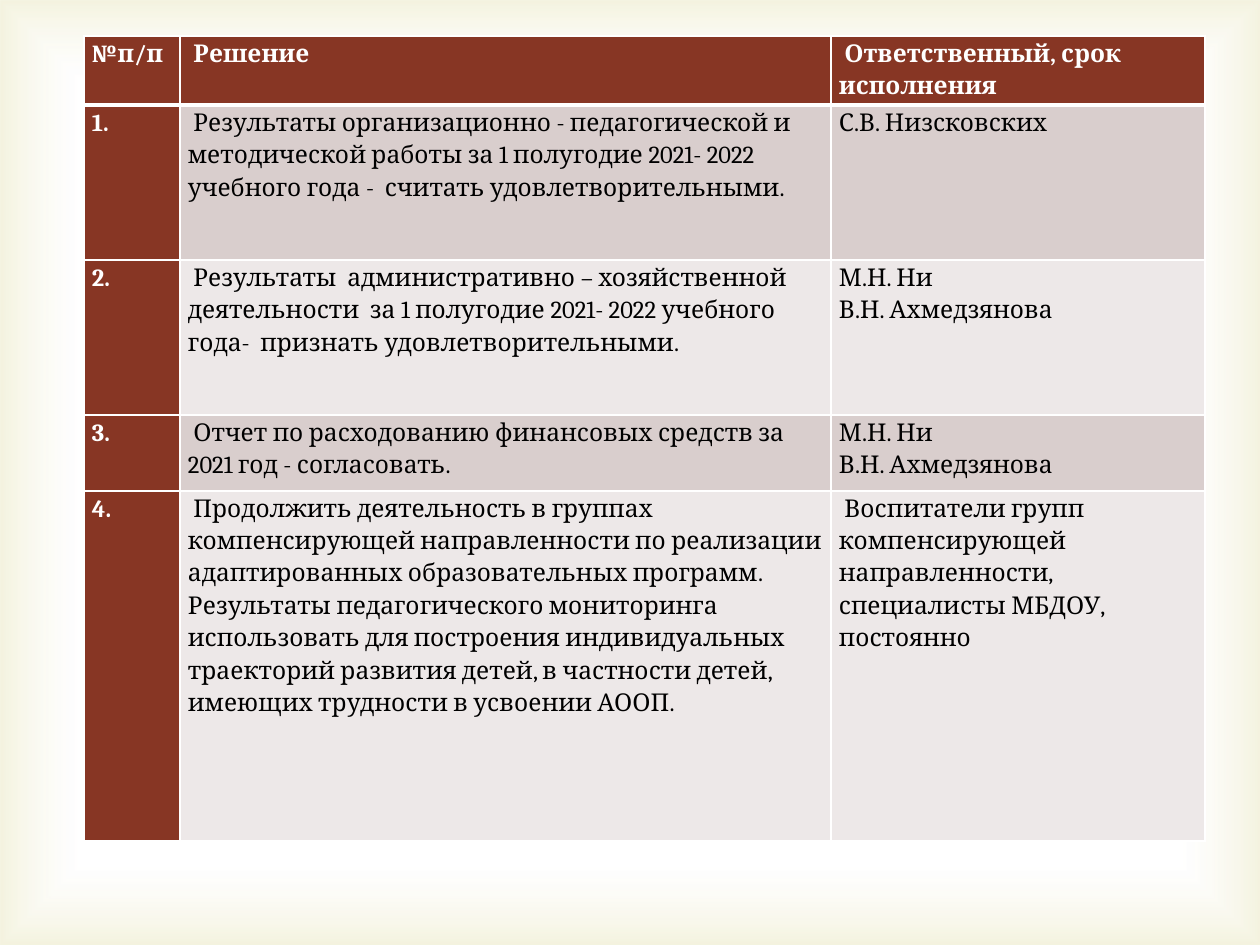
from dataclasses import dataclass

from lxml import etree
from pptx import Presentation, util as u
from pptx.dml.color import RGBColor
from pptx.enum import shapes
from pptx.oxml import parse_xml
from pptx.oxml.ns import nsdecls, qn

HEADER = ("№п/п", " Решение", " Ответственный, срок исполнения")
DECISIONS = [
    ("1.",
     " Результаты организационно - педагогической и методической работы "
     "за 1 полугодие 2021- 2022 учебного года -  считать удовлетворительными.",
     "С.В. Низсковских"),
    ("2.",
     " Результаты  административно – хозяйственной деятельности  "
     "за 1 полугодие 2021- 2022 учебного года-  признать удовлетворительными.",
     "М.Н. Ни\nВ.Н. Ахмедзянова"),
    ("3.",
     " Отчет по расходованию финансовых средств за 2021 год - согласовать.",
     "М.Н. Ни\nВ.Н. Ахмедзянова"),
    ("4.",
     " Продолжить деятельность в группах компенсирующей направленности "
     "по реализации адаптированных образовательных программ. "
     "Результаты педагогического мониторинга использовать для построения "
     "индивидуальных траекторий развития детей, в частности детей, "
     "имеющих трудности в усвоении АООП.",
     " Воспитатели групп компенсирующей направленности, "
     "специалисты МБДОУ, постоянно"),
]

SLIDE_SIZE = (1260, 945)
TABLE_ORIGIN = (84, 36)
COLUMN_WIDTHS = (96, 651, 374)
ROW_HEIGHTS = (69, 155, 155, 76, 350)
CELL_INSET = 8


@dataclass(frozen=True)
class Theme:
    font: str = "Cambria"
    size: int = 14
    line_spacing: float = 1.15
    accent: str = "873624"
    bands: tuple = ("D9CECD", "EDE8E8")
    light: str = "FFFFFF"
    dark: str = "000000"
    edge: str = "D1CA75"
    border: int = 1
    header_border: int = 3


THEME = Theme()


def px(length):
    return u.Emu(round(length * 914400 / 126))


def add_glow(slide):
    """Cover the slide with a translucent gradient that tints its edges."""
    glow = slide.shapes.add_shape(shapes.MSO_SHAPE.RECTANGLE, 0, 0,
                                  *map(px, SLIDE_SIZE))
    glow.shadow.inherit = False
    glow.line.fill.background()
    stops = "".join(
        f'<a:gs pos="{position}000"><a:srgbClr val="{color}">'
        f'<a:alpha val="{alpha}000"/></a:srgbClr></a:gs>'
        for position, color, alpha in ((83, THEME.light, 11), (100, THEME.edge, 23)))
    gradient = parse_xml(
        f'<a:gradFill {nsdecls("a")} rotWithShape="1"><a:gsLst>{stops}</a:gsLst>'
        '<a:path path="rect"><a:fillToRect l="50000" t="50000" r="50000" b="50000"/>'
        '</a:path></a:gradFill>')
    glow.element.spPr.find(qn("a:prstGeom")).addnext(gradient)


def add_borders(cell, row):
    properties = cell._tc.get_or_add_tcPr()
    thick_side = {0: "B", 1: "T"}.get(row)
    for side in "LRTB":
        width = THEME.header_border if side == thick_side else THEME.border
        line = etree.SubElement(properties, qn(f"a:ln{side}"), w=str(u.Pt(width)))
        fill = etree.SubElement(line, qn("a:solidFill"))
        etree.SubElement(fill, qn("a:srgbClr"), val=THEME.light)


def fill_cell(cell, content, row, column):
    accented = row == 0 or column == 0
    add_borders(cell, row)
    cell.fill.solid()
    cell.fill.fore_color.rgb = RGBColor.from_string(
        THEME.accent if accented else THEME.bands[(row - 1) % 2])
    cell.margin_left = cell.margin_right = px(CELL_INSET)
    cell.margin_top = cell.margin_bottom = 0
    cell.text_frame.text = content
    for paragraph in cell.text_frame.paragraphs:
        paragraph.line_spacing = THEME.line_spacing
        for run in paragraph.runs:
            run.font.name = THEME.font
            run.font.size = u.Pt(THEME.size)
            run.font.bold = accented
            run.font.color.rgb = RGBColor.from_string(
                THEME.light if accented else THEME.dark)


def add_decision_table(slide):
    rows = [HEADER, *DECISIONS]
    size = (sum(COLUMN_WIDTHS), sum(ROW_HEIGHTS))
    table = slide.shapes.add_table(len(rows), len(HEADER),
                                   *map(px, TABLE_ORIGIN + size)).table
    for column, width in zip(table.columns, COLUMN_WIDTHS):
        column.width = px(width)
    for row, height in zip(table.rows, ROW_HEIGHTS):
        row.height = px(height)
    for row, contents in enumerate(rows):
        for column, content in enumerate(contents):
            fill_cell(table.cell(row, column), content, row, column)


def main():
    presentation = Presentation()
    presentation.slide_width, presentation.slide_height = map(px, SLIDE_SIZE)
    slide = presentation.slides.add_slide(presentation.slide_layouts[6])
    slide.background.fill.solid()
    slide.background.fill.fore_color.rgb = RGBColor.from_string(THEME.light)
    add_glow(slide)
    add_decision_table(slide)
    presentation.save("out.pptx")


if __name__ == "__main__":
    main()
